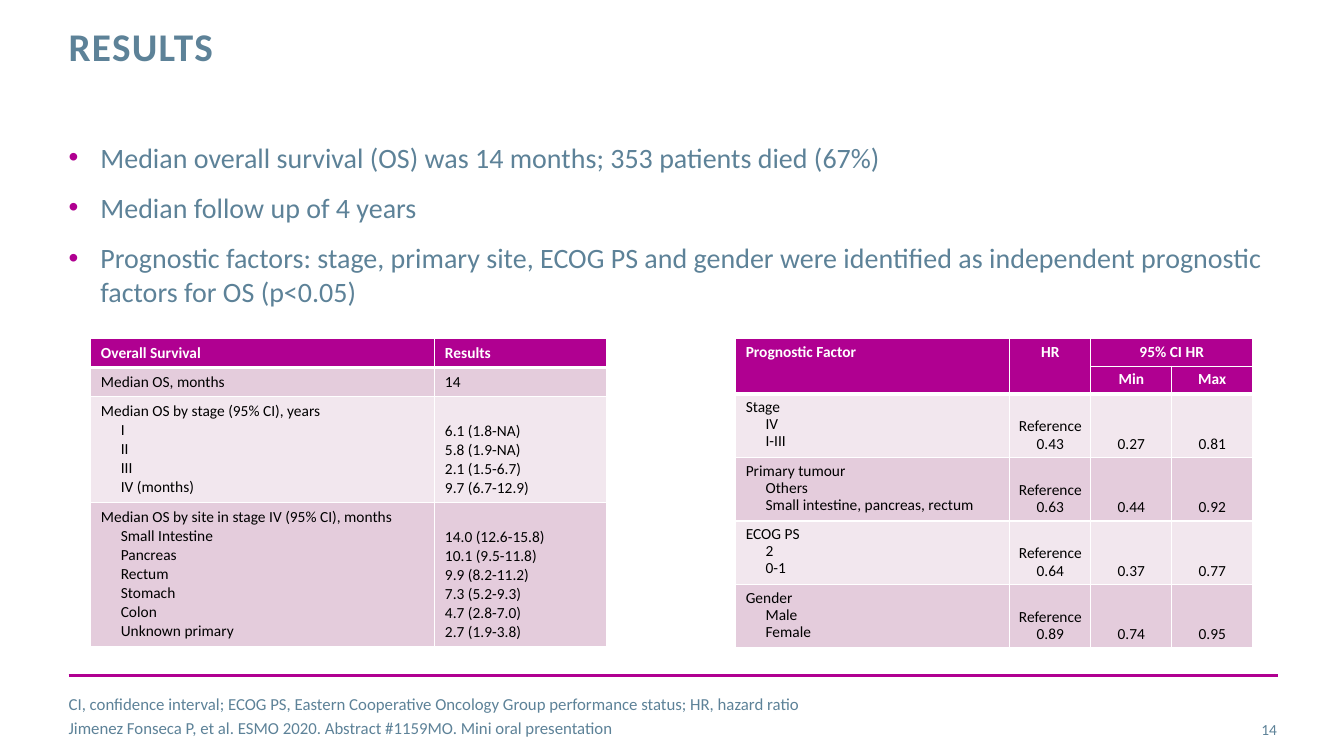
from dataclasses import dataclass

from lxml import etree
from pptx import Presentation
from pptx import util as u
from pptx.dml.color import RGBColor
from pptx.enum import shapes, text
from pptx.oxml import ns

INK = {"slate": "5D8298", "plum": "B00091", "rose": "E4CCDC",
       "pale": "F2E7EE", "white": "FFFFFF", "black": "000000"}
LEFT, MID, RIGHT = text.PP_ALIGN.LEFT, text.PP_ALIGN.CENTER, text.PP_ALIGN.RIGHT
TOP, CORE, BASE = text.MSO_ANCHOR.TOP, text.MSO_ANCHOR.MIDDLE, text.MSO_ANCHOR.BOTTOM


@dataclass
class Note:
    words: str
    x: float
    y: float
    w: float
    h: float
    size: int
    gap: int = 0
    anchor: text.MSO_ANCHOR = TOP
    align: text.PP_ALIGN = LEFT
    bullet: bool = False
    title: bool = False


@dataclass
class Grid:
    x: float
    cols: list[float]
    rows: list[float]
    cells: list[tuple[str, ...]]
    fills: list[str]
    heads: int
    pitch: float
    align: text.PP_ALIGN
    anchor: text.MSO_ANCHOR
    spans: tuple[tuple[int, int, int, int], ...] = ()


NOTES = [
    Note("Median overall survival (OS) was 14 months; 353 patients died (67%)\n"
         "Median follow up of 4 years\n"
         "Prognostic factors: stage, primary site, ECOG PS and gender were identified "
         "as independent prognostic factors for OS (p<0.05)",
         1.73, 3.53, 30.45, 12.73, 20, gap=12, bullet=True),
    Note("RESULTS", 1.73, 0.69, 24.28, 2.24, 28, title=True),
    Note("14", 30, 17.86, 2.18, 1.02, 11, anchor=CORE, align=RIGHT),
    Note("CI, confidence interval; ECOG PS, Eastern Cooperative Oncology Group "
         "performance status; HR, hazard ratio\n"
         "Jimenez Fonseca P, et al. ESMO 2020. Abstract #1159MO. Mini oral presentation",
         1.73, 17.53, 25.81, 1.02, 12, gap=3, anchor=CORE),
]

GRIDS = [
    Grid(18.54, [6.91] + [2.04] * 3, [0.7] * 2 + [1.6] * 4, [
        ("Prognostic Factor", "HR", "95% CI HR", ""),
        ("", "", "Min", "Max"),
        ("Stage\nIV\nI-III", "Reference\n0.43", "0.27", "0.81"),
        ("Primary tumour\nOthers\nSmall intestine, pancreas, rectum",
         "Reference\n0.63", "0.44", "0.92"),
        ("ECOG PS\n2\n0-1", "Reference\n0.64", "0.37", "0.77"),
        ("Gender\nMale\nFemale", "Reference\n0.89", "0.74", "0.95"),
    ], ["pale", "rose"], 2, 0.9, MID, TOP,
        ((0, 0, 1, 0), (0, 1, 1, 1), (0, 2, 0, 3))),
    Grid(2.29, [8.67, 4.33], [0.73, 0.73, 2.67, 3.64], [
        ("Overall Survival", "Results"),
        ("Median OS, months", "14"),
        ("Median OS by stage (95% CI), years\nI\nII\nIII\nIV (months)",
         "6.1 (1.8-NA)\n5.8 (1.9-NA)\n2.1 (1.5-6.7)\n9.7 (6.7-12.9)"),
        ("Median OS by site in stage IV (95% CI), months\nSmall Intestine\nPancreas\n"
         "Rectum\nStomach\nColon\nUnknown primary",
         "14.0 (12.6-15.8)\n10.1 (9.5-11.8)\n9.9 (8.2-11.2)\n7.3 (5.2-9.3)\n"
         "4.7 (2.8-7.0)\n2.7 (1.9-3.8)"),
    ], ["rose", "pale"], 1, 1.0, LEFT, CORE),
]


def tint(name: str) -> RGBColor:
    return RGBColor.from_string(INK[name])


def add(root, tag: str, **attrs: str):
    return etree.SubElement(root, ns.qn(tag), attrs)


def style(para, size: int, hue: str, bold: bool = False) -> None:
    for run in para.runs:
        run.font.name = "Calibri"
        run.font.size = u.Pt(size)
        run.font.bold = bold
        run.font.color.rgb = tint(hue)


def dot(para) -> None:
    props = para._p.get_or_add_pPr()
    props.set("marL", str(u.Cm(0.8)))
    props.set("indent", str(-u.Cm(0.8)))
    add(add(props, "a:buClr"), "a:srgbClr", val=INK["plum"])
    add(props, "a:buFont", typeface="Arial")
    add(props, "a:buChar", char="•")


def draw_note(slide, note: Note) -> None:
    box = slide.shapes.add_textbox(u.Cm(note.x), u.Cm(note.y), u.Cm(note.w), u.Cm(note.h))
    frame = box.text_frame
    frame.word_wrap = True
    frame.vertical_anchor = note.anchor
    frame.margin_left = frame.margin_right = frame.margin_top = frame.margin_bottom = 0
    frame.text = note.words
    for i, para in enumerate(frame.paragraphs):
        para.alignment = note.align
        if note.bullet:
            dot(para)
        if i:
            para.space_before = u.Pt(note.gap)
        style(para, note.size, "slate", note.title)
        if note.title:
            para.line_spacing = u.Pt(30)
            para.runs[0].font._element.set("spc", "100")


def edge(cell, top: int, base: int) -> None:
    props = cell._tc.get_or_add_tcPr()
    for side, width in zip("LRTB", (1, 1, top, base)):
        line = add(props, f"a:ln{side}", w=str(u.Pt(width)))
        add(add(line, "a:solidFill"), "a:srgbClr", val=INK["white"])


def draw_cell(cell, words: str, row: int, col: int, grid: Grid) -> None:
    head = row < grid.heads
    edge(cell, 3 if row == grid.heads else 1, 3 if row == grid.heads - 1 else 1)
    cell.fill.solid()
    cell.fill.fore_color.rgb = tint("plum" if head else grid.fills[(row - grid.heads) % 2])
    single = "\n" not in grid.cells[row][0]
    if head:
        cell.vertical_anchor = TOP
    else:
        cell.vertical_anchor = grid.anchor if col == 0 or single else BASE
    if words.startswith("Reference"):
        cell.margin_left = cell.margin_right = u.Cm(0.1)
    cell.text_frame.text = words
    for i, para in enumerate(cell.text_frame.paragraphs):
        para.line_spacing = grid.pitch
        para.alignment = grid.align if col else LEFT
        if i and col == 0:
            para._p.get_or_add_pPr().set("marL", str(u.Cm(0.5)))
        style(para, 11, "white" if head else "black", head)
        if not words:
            add(para._p, "a:endParaRPr", sz="1100")


def draw_grid(slide, grid: Grid) -> None:
    frame = slide.shapes.add_table(
        len(grid.rows), len(grid.cols), u.Cm(grid.x), u.Cm(8.53),
        u.Cm(sum(grid.cols)), u.Cm(sum(grid.rows)))
    table = frame.table
    for col, width in zip(table.columns, grid.cols):
        col.width = u.Cm(width)
    for row, height in zip(table.rows, grid.rows):
        row.height = u.Cm(height)
    for r, line in enumerate(grid.cells):
        for c, words in enumerate(line):
            draw_cell(table.cell(r, c), words, r, c, grid)
    for r, c, last, end in grid.spans:
        table.cell(r, c).merge(table.cell(last, end))


def draw_rule(slide) -> None:
    rule = slide.shapes.add_connector(
        shapes.MSO_CONNECTOR.STRAIGHT, u.Cm(1.73), u.Cm(17.02), u.Cm(32.21), u.Cm(17.02))
    rule.line.color.rgb = tint("plum")
    rule.line.width = u.Pt(2)
    add(rule._element.spPr, "a:effectLst")


def main() -> None:
    deck = Presentation()
    deck.slide_width, deck.slide_height = u.Cm(33.87), u.Cm(19.05)
    slide = deck.slides.add_slide(deck.slide_layouts[6])
    draw_rule(slide)
    for note in NOTES:
        draw_note(slide, note)
    for grid in GRIDS:
        draw_grid(slide, grid)
    deck.save("out.pptx")


if __name__ == "__main__":
    main()
